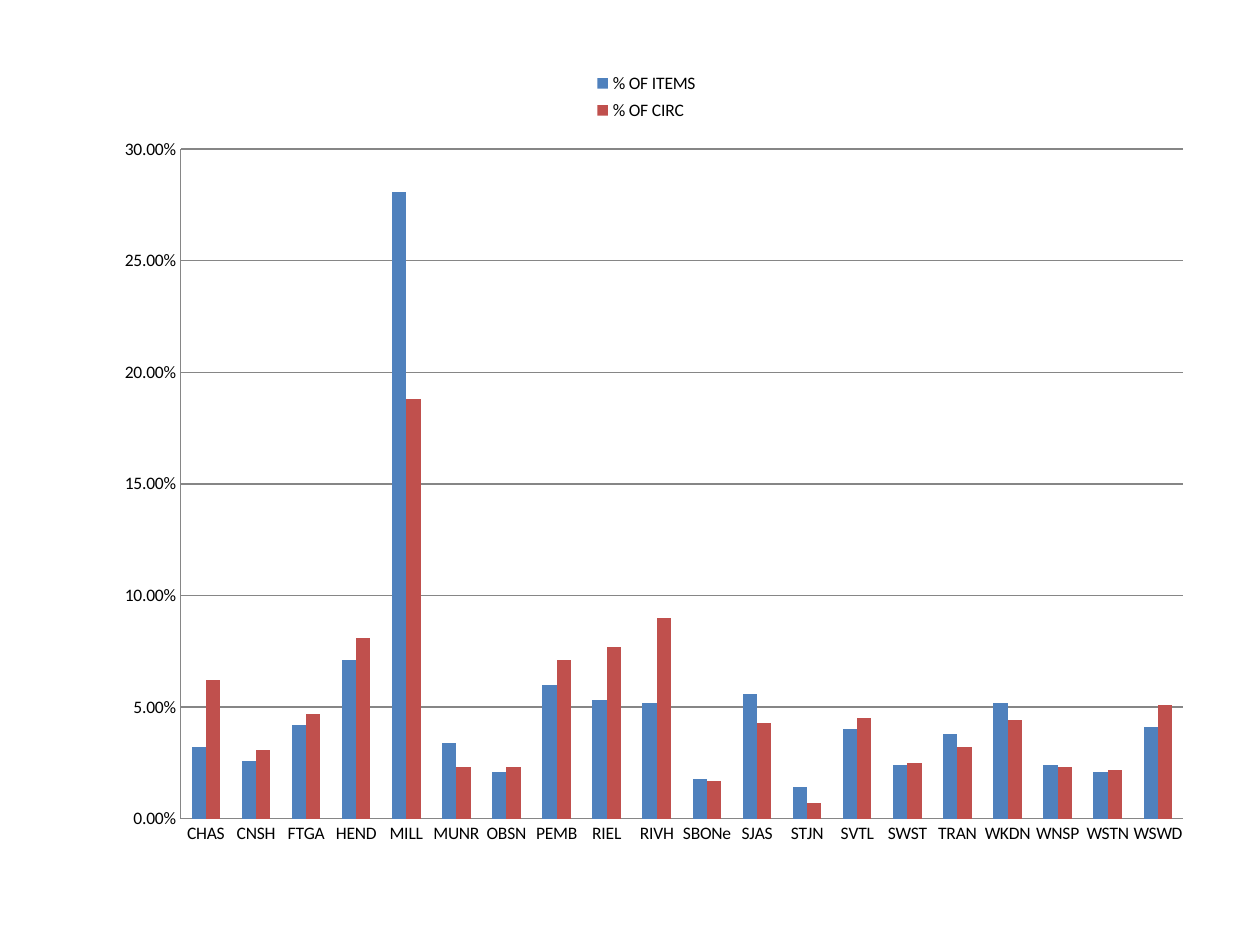
from lxml import etree
from pptx import Presentation
from pptx.chart.data import CategoryChartData
from pptx.dml.color import RGBColor
from pptx.enum.chart import XL_CHART_TYPE, XL_LEGEND_POSITION, XL_TICK_MARK
from pptx.oxml.ns import qn
from pptx.util import Inches, Pt

CLUSTERED = XL_CHART_TYPE.COLUMN_CLUSTERED
LEGEND_RIGHT = XL_LEGEND_POSITION.RIGHT
NO_TICKS = XL_TICK_MARK.NONE

# Content: branch, share of items, share of circulation
BRANCHES = [
    ("CHAS", 0.032, 0.062), ("CNSH", 0.026, 0.031), ("FTGA", 0.042, 0.047),
    ("HEND", 0.071, 0.081), ("MILL", 0.281, 0.188), ("MUNR", 0.034, 0.023),
    ("OBSN", 0.021, 0.023), ("PEMB", 0.06, 0.071), ("RIEL", 0.053, 0.077),
    ("RIVH", 0.052, 0.09), ("SBONe", 0.018, 0.017), ("SJAS", 0.056, 0.043),
    ("STJN", 0.014, 0.007), ("SVTL", 0.04, 0.045), ("SWST", 0.024, 0.025),
    ("TRAN", 0.038, 0.032), ("WKDN", 0.052, 0.044), ("WNSP", 0.024, 0.023),
    ("WSTN", 0.021, 0.022), ("WSWD", 0.041, 0.051),
]
SERIES = [("% OF ITEMS", "4F81BD"), ("% OF CIRC", "C0504D")]
PERCENT = "0.00%"
GRAY = "868686"

# Places as fractions of the chart: left, top, width, height
PLOT_AREA = (0.103, 0.135, 0.876, 0.768)
LEGEND_AREA = (0.45, 0.04, 0.12, 0.07)


def color(value):
    return RGBColor.from_string(value)


def format_text(font, size=10, name="Calibri", fill="000000"):
    font.size = Pt(size)
    font.name = name
    font.color.rgb = color(fill)


def format_line(line, fill=GRAY, width=0.75):
    line.color.rgb = color(fill)
    line.width = Pt(width)


def place(parent, position, area, inner=False):
    """Give a chart part a manual layout at the child position."""
    for old in parent.findall(qn("c:layout")):
        parent.remove(old)
    layout = etree.Element(qn("c:layout"))
    manual = etree.SubElement(layout, qn("c:manualLayout"))
    settings = [("layoutTarget", "inner")] if inner else []
    settings += [("xMode", "edge"), ("yMode", "edge")]
    settings += zip("xywh", area)
    for tag, value in settings:
        etree.SubElement(manual, qn(f"c:{tag}")).set("val", str(value))
    parent.insert(position, layout)


deck = Presentation()
deck.slide_width, deck.slide_height = Inches(10), Inches(7.5)
page = deck.slides.add_slide(deck.slide_layouts[6])

# Chart
names, *shares = zip(*BRANCHES)
data = CategoryChartData(number_format=PERCENT)
data.categories = names
for (label, _), values in zip(SERIES, shares):
    data.add_series(label, values)
chart = page.shapes.add_chart(
    CLUSTERED, Inches(0.5), Inches(0.25), Inches(9.08), Inches(6.92), data
).chart
chart.has_title = False
format_text(chart.font)

# Columns
plot = chart.plots[0]
plot.vary_by_categories = False
plot.gap_width = 150
plot.overlap = 0
for series, (_, fill) in zip(plot.series, SERIES):
    series.format.fill.solid()
    series.format.fill.fore_color.rgb = color(fill)

# Axes
for axis in (chart.category_axis, chart.value_axis):
    axis.major_tick_mark = axis.minor_tick_mark = NO_TICKS
    format_line(axis.format.line)
    format_text(axis.tick_labels.font)
scale = chart.value_axis
scale.minimum_scale, scale.maximum_scale, scale.major_unit = 0, 0.3, 0.05
scale.tick_labels.number_format = PERCENT
scale.tick_labels.number_format_is_linked = False
scale.has_major_gridlines = True
format_line(scale.major_gridlines.format.line)

# Legend and layout
chart.has_legend = True
legend = chart.legend
legend.position = LEGEND_RIGHT
legend.include_in_layout = False
format_text(legend.font)
place(legend._element, 1, LEGEND_AREA)
place(chart._chartSpace.find(f".//{qn('c:plotArea')}"), 0, PLOT_AREA, inner=True)

deck.save("out.pptx")
